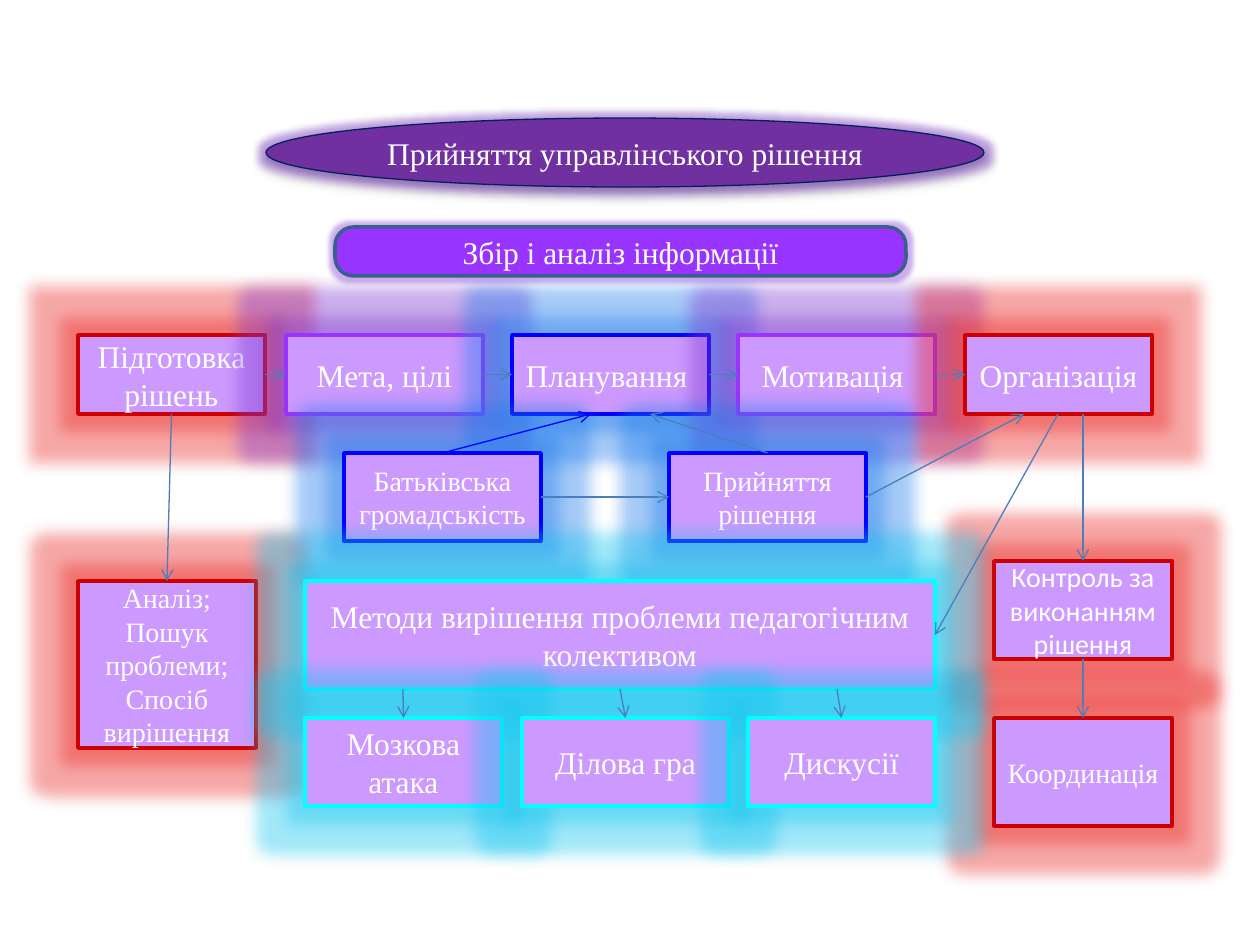
import pptx
import pptx.dml.color
import pptx.enum.shapes
import pptx.enum.text
import pptx.oxml.ns
import pptx.util
from lxml import etree

RGBColor = pptx.dml.color.RGBColor
Shape = pptx.enum.shapes.MSO_SHAPE
qn = pptx.oxml.ns.qn

EMU_PER_PX = 914400 / 126
SERIF, SANS = "Times New Roman", "Calibri"
TOP, LEFT, BOTTOM, RIGHT = range(4)

WHITE = RGBColor(0xFF, 0xFF, 0xFF)
PLUM = RGBColor(0x70, 0x30, 0xA0)
NAVY = RGBColor(0x00, 0x20, 0x60)
VIOLET = RGBColor(0x99, 0x33, 0xFF)
STEEL = RGBColor(0x3A, 0x5F, 0x8C)
LILAC = RGBColor(0xCC, 0x99, 0xFF)
RED = RGBColor(0xCC, 0x00, 0x00)
BLUE = RGBColor(0x00, 0x00, 0xFF)
CYAN = RGBColor(0x00, 0xFF, 0xFF)
ARROW = RGBColor(0x4B, 0x7E, 0xBC)
GLOWS = {
    RED: RGBColor(0xEA, 0x27, 0x24),
    VIOLET: RGBColor(0x7F, 0x36, 0xCF),
    BLUE: RGBColor(0x1F, 0x7B, 0xED),
    CYAN: RGBColor(0x16, 0xC6, 0xF0),
}


def px(length):
    return pptx.util.Emu(round(length * EMU_PER_PX))


def add_effect(shape, kind, color, percent, **settings):
    effects = shape._element.spPr.find(qn("a:effectLst"))
    effect = etree.SubElement(effects, qn(kind))
    for name, value in settings.items():
        effect.set(name, str(value))
    tint = etree.SubElement(effect, qn("a:srgbClr"), val=str(color))
    etree.SubElement(tint, qn("a:alpha"), val=str(percent * 1000))


def add_box(page, place, text, outline, size=18, font=SERIF, kind=Shape.RECTANGLE,
            fill=LILAC, width=2, glow=None, radius=18):
    """Add a glowing shape; each line of text is a centred paragraph."""
    box = page.shapes.add_shape(kind, *map(px, place))
    box.fill.solid()
    box.fill.fore_color.rgb = fill
    box.line.color.rgb = outline
    box.line.width = pptx.util.Pt(width)
    box.shadow.inherit = False
    add_effect(box, "a:glow", glow or GLOWS[outline], 40, rad=pptx.util.Pt(radius))

    frame = box.text_frame
    frame.word_wrap = True
    frame.vertical_anchor = pptx.enum.text.MSO_ANCHOR.MIDDLE
    frame.text = text
    for para in frame.paragraphs:
        para.alignment = pptx.enum.text.PP_ALIGN.CENTER
        para.font.name = font
        para.font.size = pptx.util.Pt(size)
        para.font.color.rgb = WHITE
    return box


def add_arrow(page, start, end, color=ARROW):
    """Join two ends, each either an (x, y) point or a (box, side) pair."""
    line = page.shapes.add_connector(pptx.enum.shapes.MSO_CONNECTOR.STRAIGHT, 0, 0, 0, 0)
    if isinstance(start[0], int):
        line.begin_x, line.begin_y = map(px, start)
    else:
        line.begin_connect(*start)
    if isinstance(end[0], int):
        line.end_x, line.end_y = map(px, end)
    else:
        line.end_connect(*end)
    line.line.color.rgb = color
    line.line.width = pptx.util.Pt(0.75)
    etree.SubElement(line.line._get_or_add_ln(), qn("a:tailEnd"), type="arrow")
    etree.SubElement(line._element.spPr, qn("a:effectLst"))


def add_headings(page):
    title = add_box(page, (266, 118, 718, 69), "Прийняття управлінського рішення", NAVY,
                    kind=Shape.OVAL, fill=PLUM, width=0.75, glow=GLOWS[VIOLET], radius=8)
    add_effect(title, "a:outerShdw", RGBColor(0, 0, 0), 35, blurRad=pptx.util.Pt(3.1),
               dist=pptx.util.Pt(1.8), dir=90 * 60000, rotWithShape=0)
    stage = add_box(page, (335, 227, 571, 49), "Збір і аналіз інформації", STEEL,
                    kind=Shape.ROUNDED_RECTANGLE, fill=VIOLET, glow=GLOWS[VIOLET], radius=5)
    stage.adjustments[0] = 0.38


def main():
    deck = pptx.Presentation()
    deck.slide_width, deck.slide_height = px(1260), px(945)
    page = deck.slides.add_slide(deck.slide_layouts[6])
    add_headings(page)

    # Main row of management steps
    steps = [
        add_box(page, (left, 335, width, 79), text, outline)
        for left, width, text, outline in [
            (78, 187, "Підготовка рішень", RED),
            (286, 197, "Мета, цілі", VIOLET),
            (512, 197, "Планування ", BLUE),
            (738, 197, "Мотивація ", VIOLET),
            (965, 187, "Організація ", RED),
        ]
    ]

    # Participants, control and analysis
    parents, decision = [
        add_box(page, (left, 453, 197, 88), text, BLUE, 16)
        for left, text in [(344, "Батьківська громадськість"), (669, "Прийняття рішення")]
    ]
    control = add_box(page, (994, 561, 178, 98), "Контроль за виконанням рішення",
                      RED, 16, SANS)
    coordination = add_box(page, (994, 718, 178, 108), "Координація", RED, 16)
    analysis = add_box(page, (78, 581, 178, 167),
                       "Аналіз;\nПошук проблеми;\nСпосіб вирішення", RED, 16)

    # Methods
    methods = add_box(page, (305, 581, 630, 108),
                      "Методи вирішення проблеми педагогічним колективом", CYAN)
    storm, game, debate = [
        add_box(page, (left, 718, width, 88), text, CYAN)
        for left, width, text in [
            (305, 197, "Мозкова атака"),
            (522, 207, "Ділова гра"),
            (748, 187, "Дискусії"),
        ]
    ]

    # Arrows
    add_arrow(page, (steps[0], BOTTOM), (analysis, TOP))
    for step, following in zip(steps, steps[1:]):
        add_arrow(page, (step, RIGHT), (following, LEFT))
    add_arrow(page, (parents, RIGHT), (decision, LEFT))
    add_arrow(page, (parents, TOP), (591, 414), BLUE)
    add_arrow(page, (decision, TOP), (650, 414))
    add_arrow(page, (decision, RIGHT), (1024, 414))
    add_arrow(page, (1058, 414), (methods, RIGHT))
    add_arrow(page, (1083, 414), (control, TOP))
    add_arrow(page, (control, BOTTOM), (coordination, TOP))
    add_arrow(page, (403, 689), (storm, TOP))
    add_arrow(page, (methods, BOTTOM), (game, TOP))
    add_arrow(page, (837, 689), (debate, TOP))

    deck.save("out.pptx")


if __name__ == "__main__":
    main()
